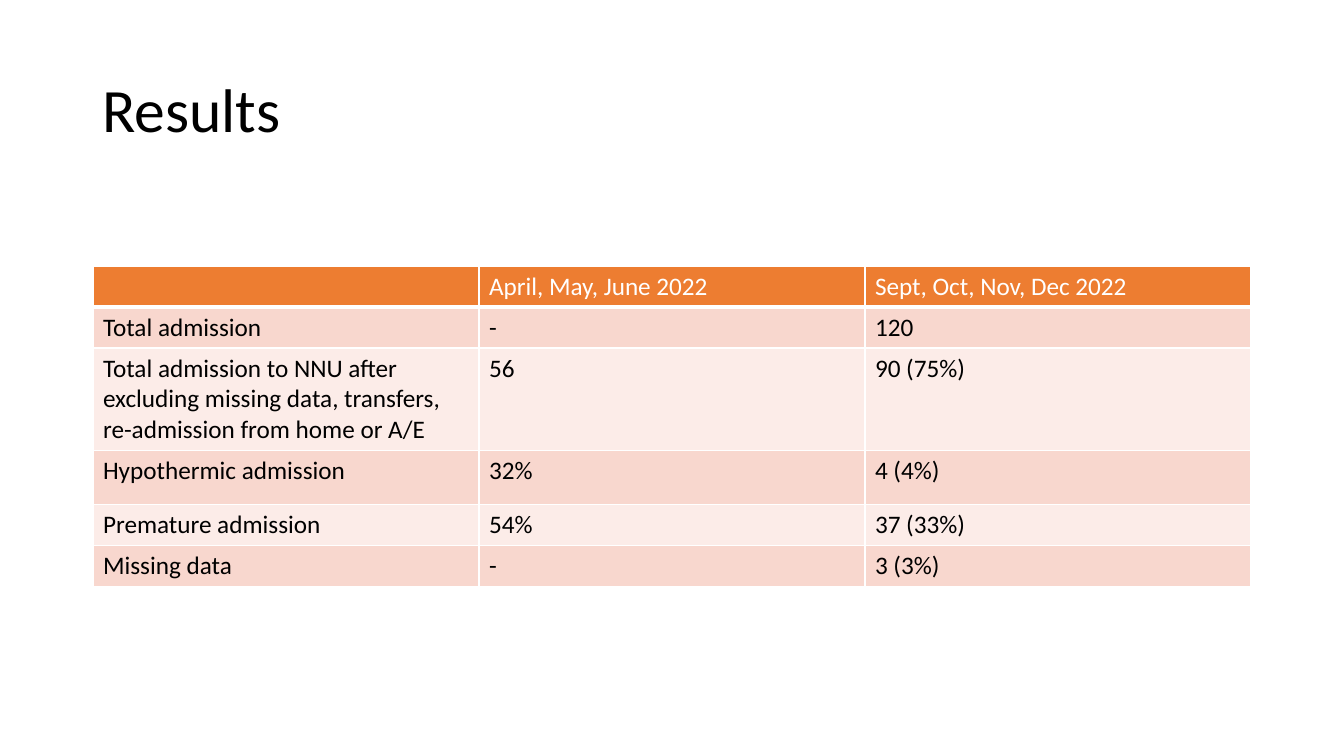
"""Build the Results slide with its table of admissions."""
from lxml import etree
from pptx import Presentation
from pptx.dml.color import RGBColor
from pptx.enum import text
from pptx.oxml import ns
from pptx.util import Emu, Pt

TITLE = "Results"
ROWS = [
    ("", "April, May, June 2022", "Sept, Oct, Nov, Dec 2022"),
    ("Total admission", "-", "120"),
    ("Total admission to NNU after excluding missing data, transfers, "
     "re-admission from home or A/E", "56", "90 (75%)"),
    ("Hypothermic admission", "32%", "4 (4%)"),
    ("Premature admission", "54%", "37 (33%)"),
    ("Missing data", "-", "3 (3%)"),
]
ROW_HEIGHTS = [41, 41, 102, 54, 41, 41]
COLUMN_WIDTH = 386
PAGE_SIZE = (1344, 756)
TITLE_BOX = (92, 40, 1159, 146)
TABLE_LEFT, TABLE_TOP = 93, 266

FONT = "Calibri"
BLACK = RGBColor(0x00, 0x00, 0x00)
WHITE = RGBColor(0xFF, 0xFF, 0xFF)
ORANGE = RGBColor(0xED, 0x7D, 0x31)
BANDS = (RGBColor(0xFC, 0xEC, 0xE8), RGBColor(0xF8, 0xD7, 0xCE))


def px(length):
    return Emu(round(length * 914400 / 100.8))


def write(paragraph, words, size, color):
    span = paragraph.add_run()
    span.text = words
    span.font.name = FONT
    span.font.size = Pt(size)
    span.font.bold = False
    span.font.color.rgb = color


def add_borders(cell, bottom):
    properties = cell._tc.get_or_add_tcPr()
    for side, points in (("L", 1), ("R", 1), ("T", 1), ("B", bottom)):
        line = etree.SubElement(properties, ns.qn(f"a:ln{side}"), w=str(Pt(points)))
        fill = etree.SubElement(line, ns.qn("a:solidFill"))
        etree.SubElement(fill, ns.qn("a:srgbClr"), val=str(WHITE))


def add_title(page):
    title = page.shapes.title
    title.left, title.top, title.width, title.height = map(px, TITLE_BOX)
    title.text_frame.vertical_anchor = text.MSO_ANCHOR.MIDDLE
    paragraph = title.text_frame.paragraphs[0]
    paragraph.alignment = text.PP_ALIGN.LEFT
    paragraph.line_spacing = 0.9
    write(paragraph, TITLE, 44, BLACK)


def add_results(page):
    columns = len(ROWS[0])
    table = page.shapes.add_table(
        len(ROWS), columns, px(TABLE_LEFT), px(TABLE_TOP),
        px(columns * COLUMN_WIDTH), px(sum(ROW_HEIGHTS))).table
    for column in table.columns:
        column.width = px(COLUMN_WIDTH)
    for index, (words, height) in enumerate(zip(ROWS, ROW_HEIGHTS)):
        table.rows[index].height = px(height)
        header = index == 0
        for cell, entry in zip(table.rows[index].cells, words):
            add_borders(cell, 3 if header else 1)
            cell.fill.solid()
            cell.fill.fore_color.rgb = ORANGE if header else BANDS[index % 2]
            if entry:
                write(cell.text_frame.paragraphs[0], entry, 18, WHITE if header else BLACK)


def main():
    deck = Presentation()
    deck.slide_width, deck.slide_height = map(px, PAGE_SIZE)
    page = deck.slides.add_slide(deck.slide_layouts[5])
    add_title(page)
    add_results(page)
    deck.save("out.pptx")


if __name__ == "__main__":
    main()
